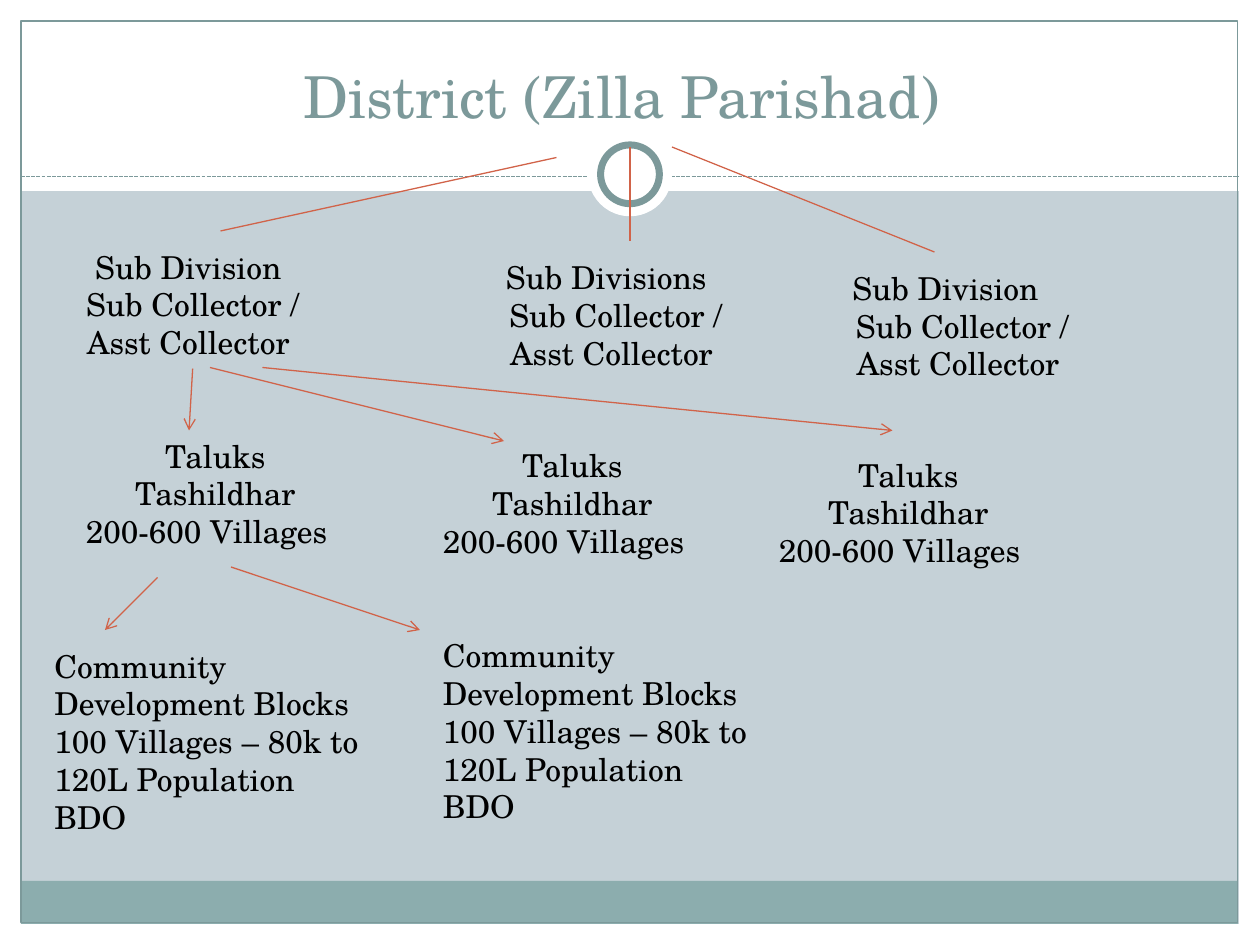
"""Build the District (Zilla Parishad) administration chart slide."""
import dataclasses

import lxml.etree
import pptx
import pptx.dml.color
import pptx.enum.dml
import pptx.enum.shapes
import pptx.enum.text
import pptx.oxml.ns
import pptx.util

PX = 7620
SHAPE = pptx.enum.shapes.MSO_SHAPE
ALIGN = pptx.enum.text.PP_ALIGN
ANCHOR = pptx.enum.text.MSO_ANCHOR
RGB = pptx.dml.color.RGBColor.from_string


@dataclasses.dataclass(frozen=True)
class Theme:
    ground: str = "C5D1D7"
    white: str = "FFFFFF"
    footer: str = "8CADAE"
    accent: str = "7C999A"
    arrow: str = "D16349"
    ink: str = "000000"
    font: str = "TeX Gyre Schola"
    title_size: int = 33
    body_size: int = 18
    thin: float = 0.75
    ring: int = 4


theme = Theme()


def write(box, lines, size, color, anchor):
    frame = box.text_frame
    settings = {"word_wrap": True, "vertical_anchor": anchor,
                "auto_size": pptx.enum.text.MSO_AUTO_SIZE.NONE}
    for name, value in settings.items():
        setattr(frame, name, value)
    for number, (words, align) in enumerate(lines):
        para = frame.add_paragraph() if number else frame.paragraphs[0]
        para.alignment = align
        span = para.add_run()
        span.text = words
        for name, value in {"name": theme.font, "size": pptx.util.Pt(size), "bold": False}.items():
            setattr(span.font, name, value)
        span.font.color.rgb = RGB(color)


def connect(start, end, color, arrow=False, dash=None):
    line = page.shapes.add_connector(
        pptx.enum.shapes.MSO_CONNECTOR.STRAIGHT, *(value * PX for value in (*start, *end)))
    line.line.color.rgb = RGB(color)
    line.line.width = pptx.util.Pt(theme.thin)
    if dash:
        line.line.dash_style = dash
    if arrow:
        tail = lxml.etree.SubElement(line.line._get_or_add_ln(), pptx.oxml.ns.qn("a:tailEnd"))
        tail.set("type", "arrow")
    lxml.etree.SubElement(line._element.spPr, pptx.oxml.ns.qn("a:effectLst"))
    return line


deck = pptx.Presentation()
deck.slide_width, deck.slide_height = 1200 * PX, 900 * PX
page = deck.slides.add_slide(deck.slide_layouts[5])
page.background.fill.solid()
page.background.fill.fore_color.rgb = RGB(theme.ground)

backdrop = [
    (SHAPE.RECTANGLE, (0, 880, 1200, 20), theme.white, None),
    (SHAPE.RECTANGLE, (0, 0, 1200, 182), theme.white, None),
    (SHAPE.RECTANGLE, (0, 0, 20, 900), theme.white, None),
    (SHAPE.RECTANGLE, (1180, 0, 20, 900), theme.white, None),
    (SHAPE.RECTANGLE, (20, 839, 1159, 41), theme.footer, None),
    (SHAPE.RECTANGLE, (20, 20, 1159, 859), None, theme.thin),
    (SHAPE.OVAL, (560, 126, 80, 80), theme.white, None),
    (SHAPE.OVAL, (572, 138, 56, 56), theme.white, theme.ring),
]
for kind, area, fill, width in backdrop:
    if kind == SHAPE.OVAL and width is None:
        connect((20, 168), (1180, 168), theme.accent, dash=pptx.enum.dml.MSO_LINE.SQUARE_DOT)
    shape = page.shapes.add_shape(kind, *(value * PX for value in area))
    shape.shadow.inherit = False
    if fill:
        shape.fill.solid()
        shape.fill.fore_color.rgb = RGB(fill)
    else:
        shape.fill.background()
    if width:
        shape.line.color.rgb = RGB(theme.accent)
        shape.line.width = pptx.util.Pt(width)
    else:
        shape.line.fill.background()

title = page.shapes.title
for name, value in {"left": 40, "top": 30, "width": 1120, "height": 100}.items():
    setattr(title, name, value * PX)
write(title, [("District (Zilla Parishad) ", ALIGN.CENTER)],
      theme.title_size, theme.accent, ANCHOR.BOTTOM)
page.shapes._spTree.append(title._element)

collectors = [("Sub Collector / ", ALIGN.CENTER), ("Asst Collector ", ALIGN.CENTER)]
taluk = [("Taluks", ALIGN.CENTER), ("Tashildhar", ALIGN.CENTER), ("200-600 Villages", ALIGN.LEFT)]
block = [(words, ALIGN.LEFT) for words in (
    "Community Development Blocks", "100 Villages – 80k to 120L Population", "BDO")]
units = [
    ((67, 230, 233, 121), [("Sub Division ", ALIGN.CENTER)] + collectors),
    ((470, 240, 233, 157), [("Sub Divisions", ALIGN.LEFT)] + collectors),
    ((800, 250, 233, 157), [("Sub Division", ALIGN.LEFT)] + collectors),
    ((70, 410, 270, 121), taluk),
    ((410, 419, 270, 121), taluk),
    ((730, 428, 270, 121), taluk),
    ((40, 610, 340, 194), block),
    ((410, 600, 340, 194), block),
]
boxes = []
for area, lines in units:
    box = page.shapes.add_textbox(*(value * PX for value in area))
    write(box, lines, theme.body_size, theme.ink, ANCHOR.TOP)
    boxes.append(box)

for start, end in [((530, 150), (210, 220)), ((600, 140), (600, 230)), ((640, 140), (890, 240))]:
    connect(start, end, theme.arrow)

first_taluk = connect((184, 351), (180, 410), theme.arrow, arrow=True)
first_taluk.begin_connect(boxes[0], 2)
for start, end in [((200, 350), (480, 420)), ((250, 350), (850, 410)),
                   ((150, 550), (100, 600)), ((220, 540), (400, 600))]:
    connect(start, end, theme.arrow, arrow=True)

deck.save("out.pptx")
